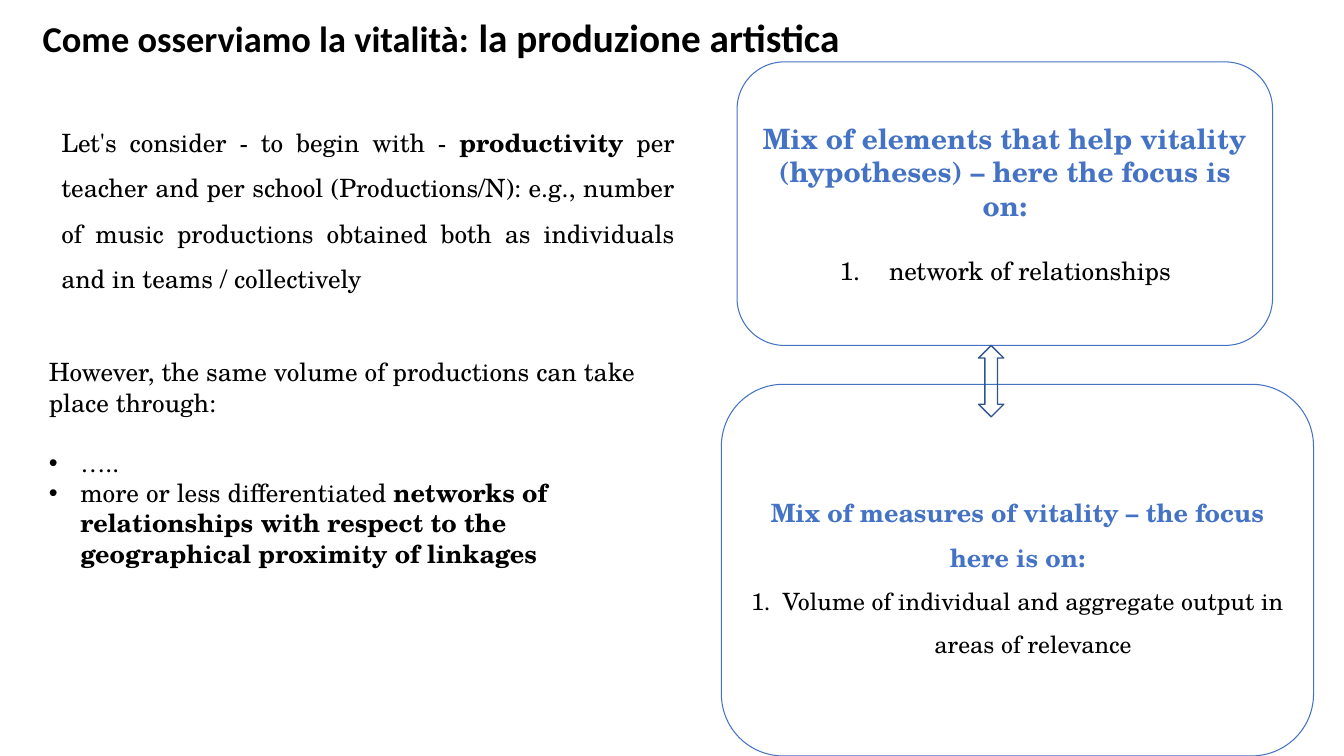
from dataclasses import dataclass

from lxml.etree import SubElement as Sub
from pptx import Presentation
from pptx.dml.color import RGBColor as Rgb
from pptx.enum.shapes import MSO_SHAPE as Kind
from pptx.enum.text import MSO_ANCHOR as Anchor, MSO_AUTO_SIZE as Fit, PP_ALIGN as Align
from pptx.oxml.ns import qn
from pptx.util import Emu, Pt

PX = 9525


@dataclass(frozen=True)
class Theme:
    ink: str = "000000"
    blue: str = "4472C4"
    navy: str = "31538F"
    paper: str = "FFFFFF"
    head: str = "Calibri"
    body: str = "TeX Gyre Schola"
    lead: int = 26
    topic: int = 28
    large: int = 20
    text: int = 18
    small: int = 17


@dataclass
class Run:
    text: str
    size: int
    bold: bool = False
    color: str = Theme.ink
    font: str = Theme.body


@dataclass
class Para:
    runs: list
    align: Align = Align.LEFT
    line: float = 1.0
    gap: float = 0
    mark: str = ""
    left: int = 0
    hang: int = 0


class Page:
    def __init__(self, deck, theme):
        self.theme = theme
        self.slide = deck.slides.add_slide(deck.slide_layouts[5])

    def fill(self, frame, paras, anchor):
        frame.word_wrap = True
        frame.auto_size = Fit.NONE
        frame.vertical_anchor = anchor
        for i, para in enumerate(paras):
            item = frame.add_paragraph() if i else frame.paragraphs[0]
            item.alignment = para.align
            item.line_spacing = para.line
            item.space_before = Pt(para.gap)
            if para.mark:
                self.mark(item, para)
            for run in para.runs:
                part = item.add_run()
                part.text = run.text
                font = part.font
                font.name, font.size, font.bold = run.font, Pt(run.size), run.bold
                font.color.rgb = Rgb.from_string(run.color)

    def mark(self, item, para):
        props = item._p.get_or_add_pPr()
        props.set("marL", str(para.left * PX))
        props.set("indent", str(-para.hang * PX))
        tint = Sub(props, qn("a:buClr"))
        Sub(tint, qn("a:srgbClr"), val=self.theme.ink)
        if para.mark == "1.":
            Sub(props, qn("a:buFont"), typeface=self.theme.body)
            Sub(props, qn("a:buAutoNum"), type="arabicPeriod")
        else:
            Sub(props, qn("a:buFont"), typeface="Arial")
            Sub(props, qn("a:buChar"), char=para.mark)

    def title(self, box, runs):
        shape = self.slide.shapes.title
        shape.left, shape.top, shape.width, shape.height = (Emu(n * PX) for n in box)
        self.fill(shape.text_frame, [Para(runs, line=0.9)], Anchor.MIDDLE)

    def text(self, box, paras):
        shape = self.slide.shapes.add_textbox(*(Emu(n * PX) for n in box))
        self.fill(shape.text_frame, paras, Anchor.TOP)

    def shape(self, kind, box, color, width):
        shape = self.slide.shapes.add_shape(kind, *(Emu(n * PX) for n in box))
        shape.shadow.inherit = False
        shape.line.color.rgb = Rgb.from_string(color)
        shape.line.width = Pt(width)
        return shape

    def panel(self, box, paras):
        shape = self.shape(Kind.ROUNDED_RECTANGLE, box, self.theme.blue, 0.75)
        shape.fill.solid()
        shape.fill.fore_color.rgb = Rgb.from_string(self.theme.paper)
        self.fill(shape.text_frame, paras, Anchor.MIDDLE)

    def arrow(self, box):
        self.shape(Kind.UP_DOWN_ARROW, box, self.theme.navy, 1).fill.background()


def main():
    deck = Presentation()
    deck.slide_width, deck.slide_height = Emu(1280 * PX), Emu(720 * PX)
    look = Theme()
    page = Page(deck, look)
    size = look.text

    page.title((31, 18, 1023, 39), [
        Run("Come osserviamo la vitalità:", look.lead, True, font=look.head),
        Run(" la produzione artistica", look.topic, True, font=look.head),
    ])
    page.panel((702, 59, 510, 270), [
        Para([Run("Mix of elements that help vitality (hypotheses) – here the focus is on:",
                  look.large, True, look.blue)], Align.CENTER),
        Para([Run("network of relationships", size)], Align.CENTER,
             gap=24, mark="1.", left=48, hang=47),
    ])
    page.panel((687, 366, 564, 354), [
        Para([Run("Mix of measures of vitality – the focus here is on:",
                  size, True, look.blue)], Align.CENTER, 1.5),
        Para([Run("Volume of individual and aggregate output in areas of relevance",
                  look.small)], Align.CENTER, 1.5, mark="1.", left=30, hang=30),
    ])
    page.text((49, 102, 603, 233), [
        Para([
            Run("Let's consider - to begin with - ", size),
            Run("productivity", size, True),
            Run(" per teacher and per school (Productions/N): e.g., number of music "
                "productions obtained both as individuals and in teams / collectively", size),
        ], Align.JUSTIFY, 1.5),
    ])
    page.text((37, 335, 599, 242), [
        Para([Run("However, the same volume of productions can take place through:", size)]),
        Para([Run("…..", size)], gap=21.5, mark="•", left=30, hang=30),
        Para([
            Run("more or less differentiated ", size),
            Run("networks of relationships with respect to the geographical "
                "proximity of linkages", size, True),
        ], mark="•", left=30, hang=30),
    ])
    page.arrow((932, 329, 24, 68))
    deck.save("out.pptx")


if __name__ == "__main__":
    main()
